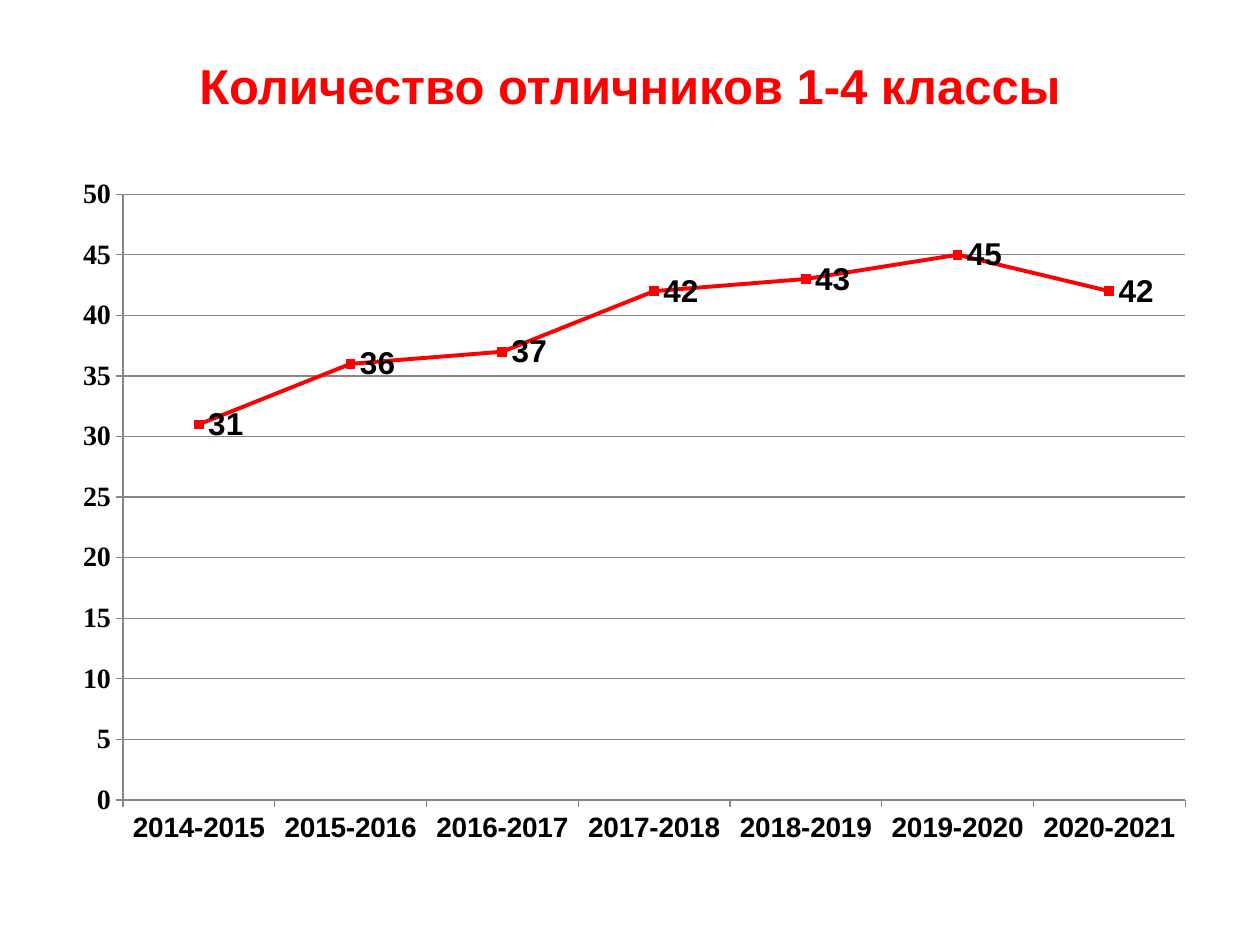
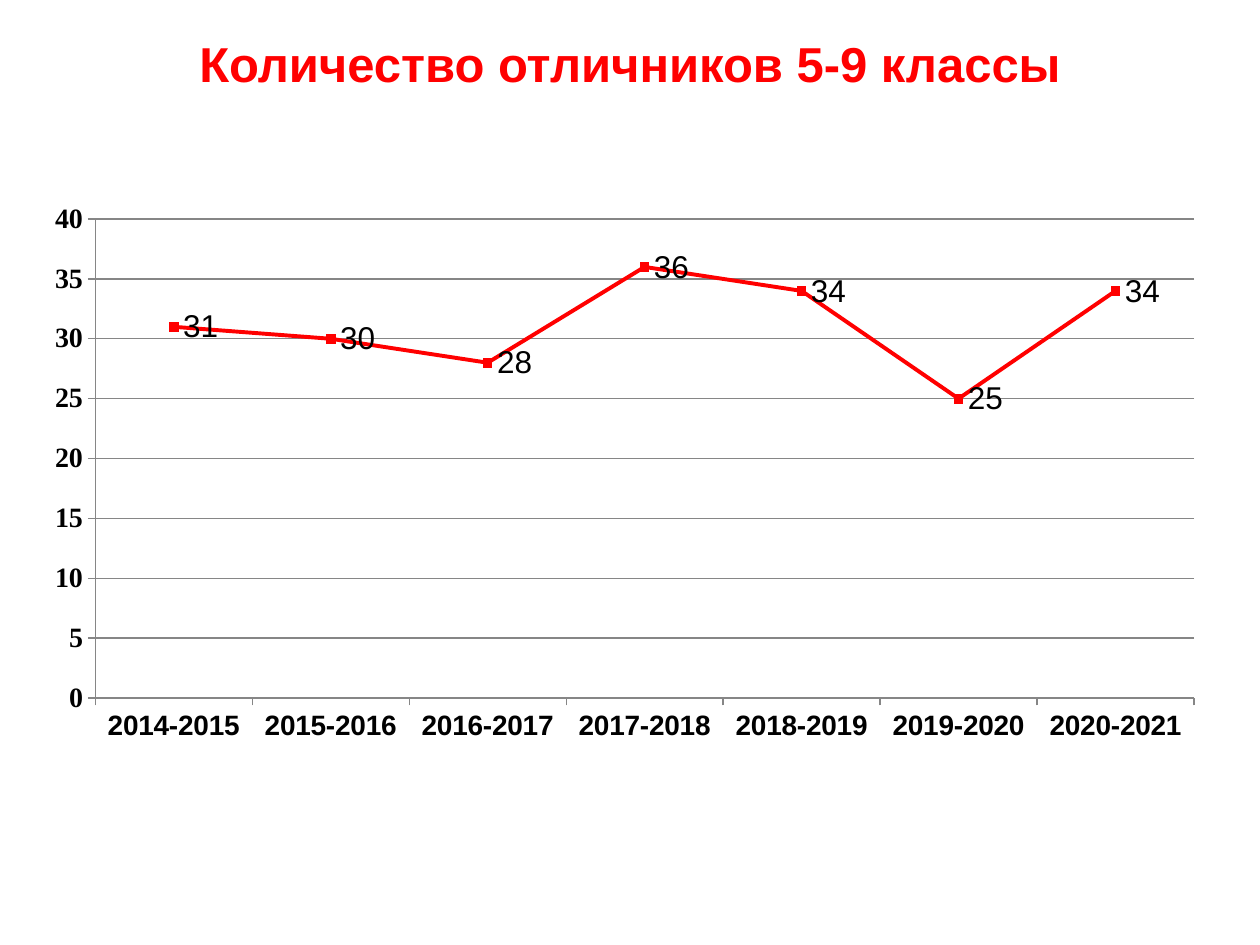
from lxml import etree
from pptx import Presentation
from pptx.chart.data import CategoryChartData
from pptx.dml.color import RGBColor
from pptx.enum.chart import (XL_CHART_TYPE, XL_LABEL_POSITION,
                             XL_MARKER_STYLE, XL_TICK_MARK)
from pptx.enum.text import MSO_ANCHOR, PP_ALIGN
from pptx.oxml.ns import qn
from pptx.util import Pt

LINE_MARKERS = XL_CHART_TYPE.LINE_MARKERS
RIGHT = XL_LABEL_POSITION.RIGHT
SQUARE = XL_MARKER_STYLE.SQUARE
OUTSIDE, NO_TICK = XL_TICK_MARK.OUTSIDE, XL_TICK_MARK.NONE
MIDDLE, CENTER = MSO_ANCHOR.MIDDLE, PP_ALIGN.CENTER

RED = RGBColor(0xFF, 0x00, 0x00)
BLACK = RGBColor(0x00, 0x00, 0x00)
GREY = RGBColor(0x86, 0x86, 0x86)
SANS, SERIF = "Arial", "Times New Roman"

YEARS = [f"{year}-{year + 1}" for year in range(2014, 2021)]

# Boxes are left, top, width, height in points
SLIDES = [
    dict(title="Количество отличников 1-4 классы",
         title_box=(36, 12.5, 648, 72),
         chart_box=(34.5, 94.5, 655, 395),
         plot_box=(70.3, 111, 607, 346.2),
         counts=[31, 36, 37, 42, 43, 45, 42], top_value=50, bold_labels=True),
    dict(title="Количество отличников 5-9 классы",
         title_box=(36, 0, 648, 72),
         chart_box=(18, 110, 678, 320),
         plot_box=(54.4, 125.2, 628, 273.7),
         counts=[31, 30, 28, 36, 34, 25, 34], top_value=40, bold_labels=False),
]


def style_font(font, size, name=SANS, color=BLACK, bold=True):
    font.size, font.name, font.bold = Pt(size), name, bold
    font.color.rgb = color


def add_title(s, text, box):
    tf = s.shapes.add_textbox(*map(Pt, box)).text_frame
    tf.word_wrap = True
    tf.vertical_anchor = MIDDLE
    p = tf.paragraphs[0]
    p.text = text
    p.alignment = CENTER
    style_font(p.runs[0].font, 28, color=RED)


def style_line(line, color, width):
    line.color.rgb = color
    line.width = Pt(width)


def style_axis(axis, font_name):
    axis.major_tick_mark = OUTSIDE
    axis.minor_tick_mark = NO_TICK
    style_line(axis.format.line, GREY, 0.75)
    style_font(axis.tick_labels.font, 16, font_name)


def place_plot(chart, chart_box, plot_box):
    """Fix the inner plot area as fractions of the chart box."""
    left, top, width, height = chart_box
    x, y, w, h = plot_box
    area = chart.element.find(".//" + qn("c:plotArea"))
    for old in area.findall(qn("c:layout")):
        area.remove(old)
    layout = etree.Element(qn("c:layout"))
    manual = etree.SubElement(layout, qn("c:manualLayout"))
    settings = [("layoutTarget", "inner"), ("xMode", "edge"), ("yMode", "edge"),
                ("x", (x - left) / width), ("y", (y - top) / height),
                ("w", w / width), ("h", h / height)]
    for tag, value in settings:
        etree.SubElement(manual, qn("c:" + tag)).set("val", str(value))
    area.insert(0, layout)


def add_line_chart(s, chart_box, plot_box, counts, top_value, bold_labels):
    data = CategoryChartData()
    data.categories = YEARS
    data.add_series("Series 1", counts)
    chart = s.shapes.add_chart(LINE_MARKERS, *map(Pt, chart_box), data).chart
    chart.has_title = chart.has_legend = False
    style_font(chart.font, 18, bold=False)
    place_plot(chart, chart_box, plot_box)

    # Axes and grid
    style_axis(chart.category_axis, SANS)
    axis = chart.value_axis
    style_axis(axis, SERIF)
    axis.minimum_scale, axis.maximum_scale, axis.major_unit = 0, top_value, 5
    axis.has_major_gridlines = True
    style_line(axis.major_gridlines.format.line, GREY, 0.75)

    # Line, markers and values
    plot = chart.plots[0]
    plot.vary_by_categories = False
    series = plot.series[0]
    series.smooth = False
    style_line(series.format.line, RED, 2.25)
    marker = series.marker
    marker.style, marker.size = SQUARE, 5
    marker.format.fill.solid()
    marker.format.fill.fore_color.rgb = RED
    style_line(marker.format.line, RED, 0.75)
    labels = series.data_labels
    labels.show_value = True
    labels.position = RIGHT
    style_font(labels.font, 18, bold=bold_labels)


def add_chart_slide(prs, title, title_box, **chart_options):
    s = prs.slides.add_slide(prs.slide_layouts[6])
    add_title(s, title, title_box)
    add_line_chart(s, **chart_options)


def main():
    prs = Presentation()
    prs.slide_width, prs.slide_height = Pt(720), Pt(540)
    for slide in SLIDES:
        add_chart_slide(prs, **slide)
    prs.save("out.pptx")


if __name__ == "__main__":
    main()
